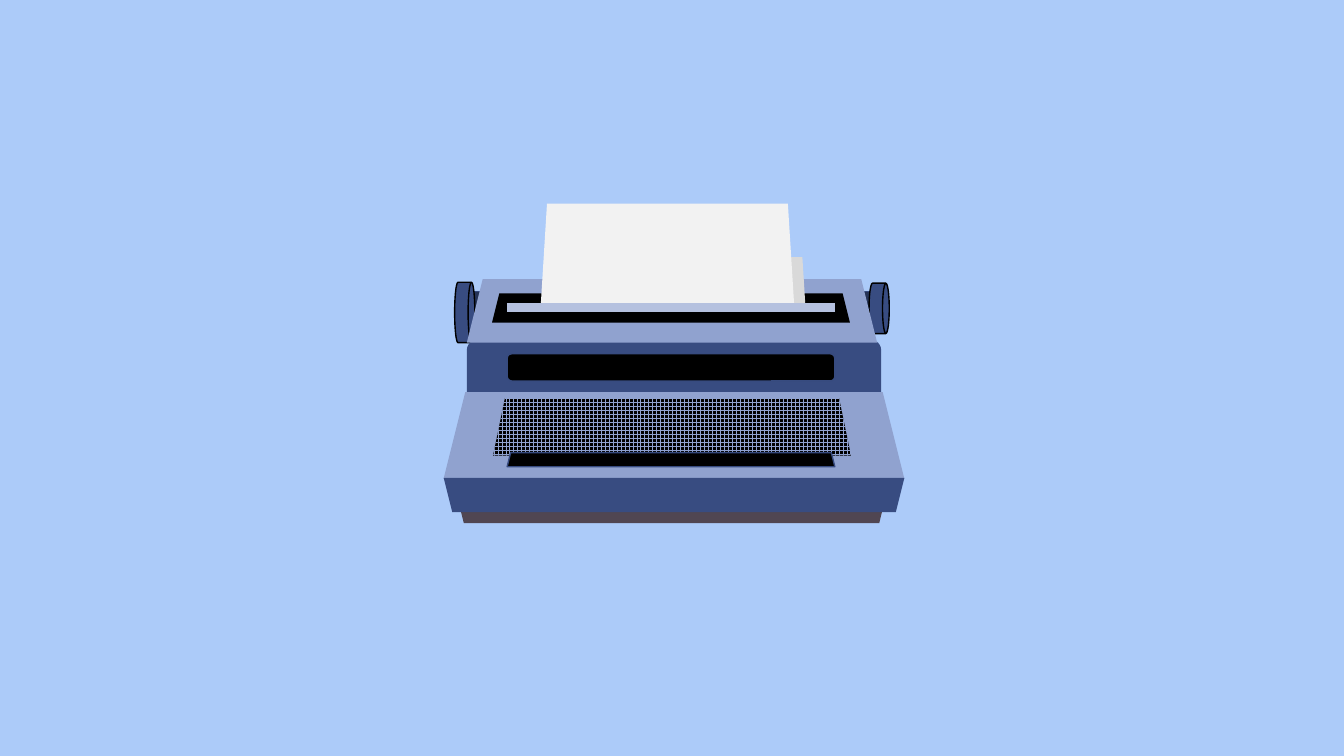
from dataclasses import dataclass

from lxml import etree
from pptx import Presentation
from pptx.dml.color import RGBColor
from pptx.enum.dml import MSO_PATTERN
from pptx.enum.shapes import MSO_CONNECTOR, MSO_SHAPE as Shape
from pptx.oxml.ns import qn
from pptx.util import Inches, Pt


@dataclass(frozen=True)
class Theme:
    sky: str = "ACCBF9"
    navy: str = "384C81"
    outline: str = "374B7F"
    roller: str = "253356"
    panel: str = "90A2CF"
    platen: str = "B5C1DF"
    base: str = "504652"
    paper: str = "F2F2F2"
    back_sheet: str = "D9D9D9"
    black: str = "000000"
    thin: float = 1
    thick: float = 6


THEME = Theme()


def rgb(colour):
    return RGBColor.from_string(colour)


def add_part(slide, box, place, kind, colour, outline=None, adjust=None, flipped=False):
    """Add one filled shape, placed relative to the box's top left corner."""
    left, top, width, height = place
    part = slide.shapes.add_shape(kind, Inches(box[0] + left), Inches(box[1] + top),
                                  Inches(width), Inches(height))
    part.shadow.inherit = False
    part.fill.solid()
    part.fill.fore_color.rgb = rgb(colour)
    if outline:
        part.line.color.rgb = rgb(outline)
        part.line.width = Pt(THEME.thin)
    else:
        part.line.fill.background()
    if adjust is not None:
        part.adjustments[0] = adjust
    if flipped:
        part.rotation = 180
    return part


def add_platen(slide, box, left, right, height):
    platen = slide.shapes.add_connector(
        MSO_CONNECTOR.STRAIGHT, Inches(box[0] + left), Inches(box[1] + height),
        Inches(box[0] + right), Inches(box[1] + height))
    platen.line.color.rgb = rgb(THEME.platen)
    platen.line.width = Pt(THEME.thick)
    etree.SubElement(platen._element.spPr, qn("a:effectLst"))


def draw_roller(slide, box):
    add_part(slide, box, (0.19, 0.87, 4.07, 0.23), Shape.RECTANGLE, THEME.roller, THEME.outline)
    # Knobs at both ends
    for place in ((0.11, 0.78, 0.2, 0.6), (4.22, 0.79, 0.2, 0.5)):
        add_part(slide, box, place, Shape.FLOWCHART_DIRECT_ACCESS_STORAGE,
                 THEME.navy, THEME.black)


def draw_body(slide, box):
    add_part(slide, box, (0.12, 2.85, 4.28, 0.32), Shape.TRAPEZOID, THEME.base, flipped=True)
    add_part(slide, box, (0.23, 1.35, 4.11, 0.63), Shape.ROUNDED_RECTANGLE, THEME.navy)
    # Keyboard deck and front edge
    add_part(slide, box, (0, 1.87, 4.57, 0.86), Shape.TRAPEZOID, THEME.panel)
    add_part(slide, box, (0, 2.72, 4.57, 0.34), Shape.TRAPEZOID, THEME.navy, flipped=True)
    # Keys
    keys = add_part(slide, box, (0.49, 1.93, 3.55, 0.57), Shape.TRAPEZOID,
                    THEME.black, adjust=0.207)
    keys.fill.patterned()
    keys.fill.pattern = MSO_PATTERN.LARGE_GRID
    keys.fill.fore_color.rgb = rgb(THEME.panel)
    keys.fill.back_color.rgb = rgb(THEME.black)
    # Window above the keys
    add_part(slide, box, (0.63, 1.49, 3.25, 0.27), Shape.ROUNDED_RECTANGLE,
             THEME.black, THEME.outline)


def draw_carriage(slide, box):
    add_part(slide, box, (0.23, 0.75, 4.07, 0.63), Shape.TRAPEZOID, THEME.panel)
    add_part(slide, box, (0.48, 0.89, 3.55, 0.29), Shape.TRAPEZOID, THEME.black)
    # Back and front of the sheet
    add_part(slide, box, (1.07, 0.53, 2.52, 0.52), Shape.TRAPEZOID,
             THEME.back_sheet, adjust=0.062)
    add_part(slide, box, (0.96, 0, 2.52, 1.06), Shape.TRAPEZOID, THEME.paper, adjust=0.062)
    add_platen(slide, box, 0.63, 3.88, 1.03)


def draw_space_bar(slide, box):
    add_part(slide, box, (0.63, 2.47, 3.25, 0.14), Shape.TRAPEZOID, THEME.black, THEME.outline)


def draw_typewriter(slide, box):
    """Draw all regions from back to front."""
    for draw_region in (draw_roller, draw_body, draw_carriage, draw_space_bar):
        draw_region(slide, box)


def main():
    deck = Presentation()
    deck.slide_width, deck.slide_height = Inches(13.33), Inches(7.5)
    slide = deck.slides.add_slide(deck.slide_layouts[6])
    slide.background.fill.solid()
    slide.background.fill.fore_color.rgb = rgb(THEME.sky)
    draw_typewriter(slide, (4.4, 2.02))
    deck.save("out.pptx")


if __name__ == "__main__":
    main()
